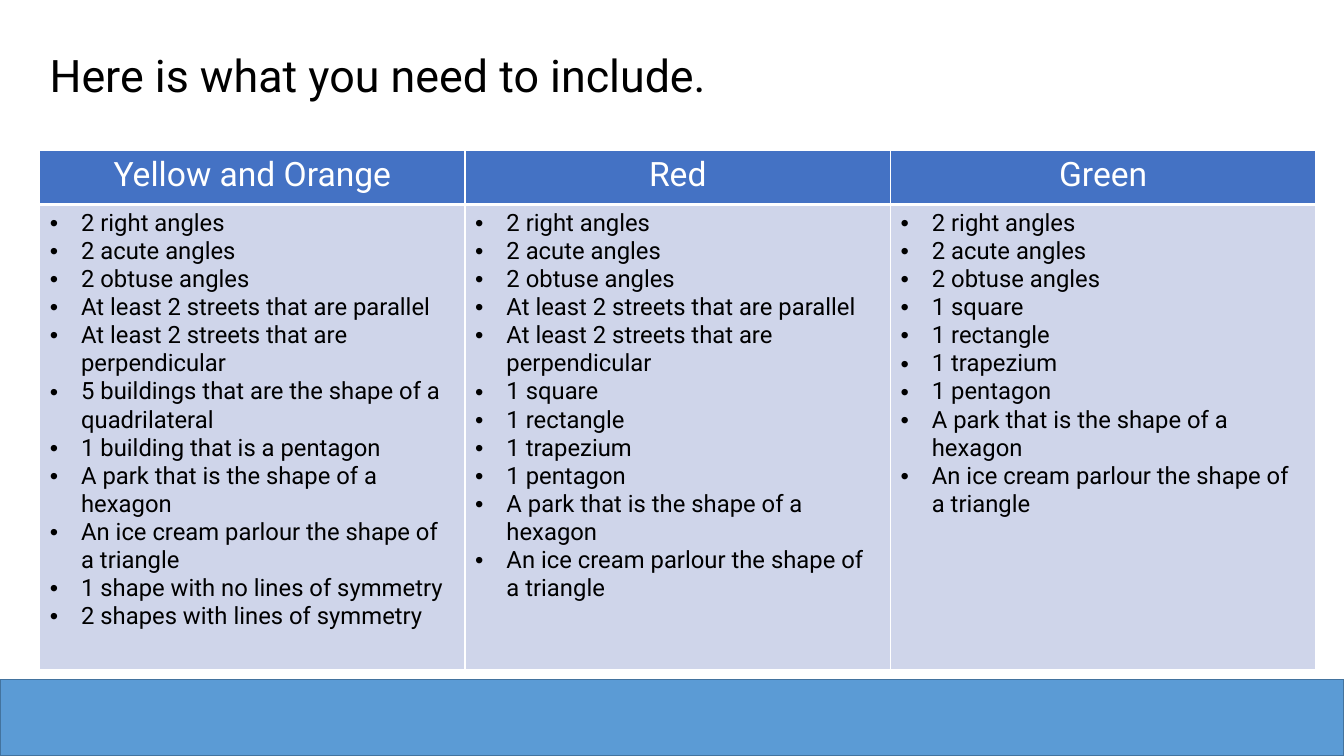
from lxml import etree
from pptx import Presentation
from pptx.dml.color import RGBColor
from pptx.enum.shapes import MSO_SHAPE
from pptx.enum.text import MSO_AUTO_SIZE, PP_ALIGN
from pptx.oxml.ns import qn
from pptx.util import Cm, Pt

RECTANGLE = MSO_SHAPE.RECTANGLE
CENTER, LEFT = PP_ALIGN.CENTER, PP_ALIGN.LEFT
FIT_SHAPE = MSO_AUTO_SIZE.SHAPE_TO_FIT_TEXT

COLORS = {
    "black": "000000",
    "white": "FFFFFF",
    "header": "4472C4",
    "body": "CFD5EA",
    "band": "5B9BD5",
    "band_edge": "43739E",
}

ANGLES = ["2 right angles", "2 acute angles", "2 obtuse angles"]
STREETS = [
    "At least 2 streets that are parallel",
    "At least 2 streets that are perpendicular",
]
SHAPES = ["1 square", "1 rectangle", "1 trapezium", "1 pentagon"]
PLACES = [
    "A park that is the shape of a hexagon",
    "An ice cream parlour the shape of a triangle",
]
BUILDINGS = [
    "5 buildings that are the shape of a quadrilateral",
    "1 building that is a pentagon",
]
SYMMETRY = ["1 shape with no lines of symmetry", "2 shapes with lines of symmetry"]
GROUPS = {
    "Yellow and Orange": ANGLES + STREETS + BUILDINGS + PLACES + SYMMETRY,
    "Red": ANGLES + STREETS + SHAPES + PLACES,
    "Green": ANGLES + SHAPES + PLACES,
}


def write(frame, lines, size, color, align=LEFT, bullet=False):
    """Put each line in its own paragraph, with a hanging bullet if asked."""
    for index, line in enumerate(lines):
        para = frame.add_paragraph() if index else frame.paragraphs[0]
        para.alignment = align
        span = para.add_run()
        span.text = line
        for name, value in {"name": "Roboto", "size": Pt(size), "bold": False}.items():
            setattr(span.font, name, value)
        span.font.color.rgb = RGBColor.from_string(COLORS[color])
        if bullet:
            props = para._p.get_or_add_pPr()
            props.set("marL", str(Cm(0.79)))
            props.set("indent", str(-Cm(0.79)))
            etree.SubElement(props, qn("a:buFont"), typeface="Arial")
            etree.SubElement(props, qn("a:buChar"), char="•")


def style_cell(cell, fill, bottom_width):
    """Give the cell white borders and a plain fill."""
    props = cell._tc.get_or_add_tcPr()
    for side, width in {"L": 1, "R": 1, "T": 1, "B": bottom_width}.items():
        line = etree.SubElement(props, qn(f"a:ln{side}"), w=str(Pt(width)))
        paint = etree.SubElement(line, qn("a:solidFill"))
        etree.SubElement(paint, qn("a:srgbClr"), val=COLORS["white"])
    cell.fill.solid()
    cell.fill.fore_color.rgb = RGBColor.from_string(COLORS[fill])


deck = Presentation()
deck.slide_width, deck.slide_height = Cm(33.87), Cm(19.05)
page = deck.slides.add_slide(deck.slide_layouts[6])

# Band along the bottom
band = page.shapes.add_shape(RECTANGLE, Cm(0), Cm(17.12), deck.slide_width, Cm(1.93))
band.shadow.inherit = False
band.fill.solid()
band.fill.fore_color.rgb = RGBColor.from_string(COLORS["band"])
band.line.color.rgb = RGBColor.from_string(COLORS["band_edge"])
band.line.width = Pt(1)

# Title
title = page.shapes.add_textbox(Cm(1), Cm(1.07), Cm(18.16), Cm(1.62))
title.text_frame.word_wrap = False
title.text_frame.auto_size = FIT_SHAPE
write(title.text_frame, ["Here is what you need to include."], 32, "black")

# Table of requirements, one column per group
table = page.shapes.add_table(
    2, len(GROUPS), Cm(1), Cm(3.78), Cm(32.16), Cm(13.1)
).table
table.rows[0].height, table.rows[1].height = Cm(1.37), Cm(11.73)
for column, (group, items) in enumerate(GROUPS.items()):
    table.columns[column].width = Cm(10.72)
    header, body = table.cell(0, column), table.cell(1, column)
    style_cell(header, "header", 3)
    style_cell(body, "body", 1)
    write(header.text_frame, [group], 24, "white", align=CENTER)
    write(body.text_frame, items, 17, "black", bullet=True)

deck.save("out.pptx")
